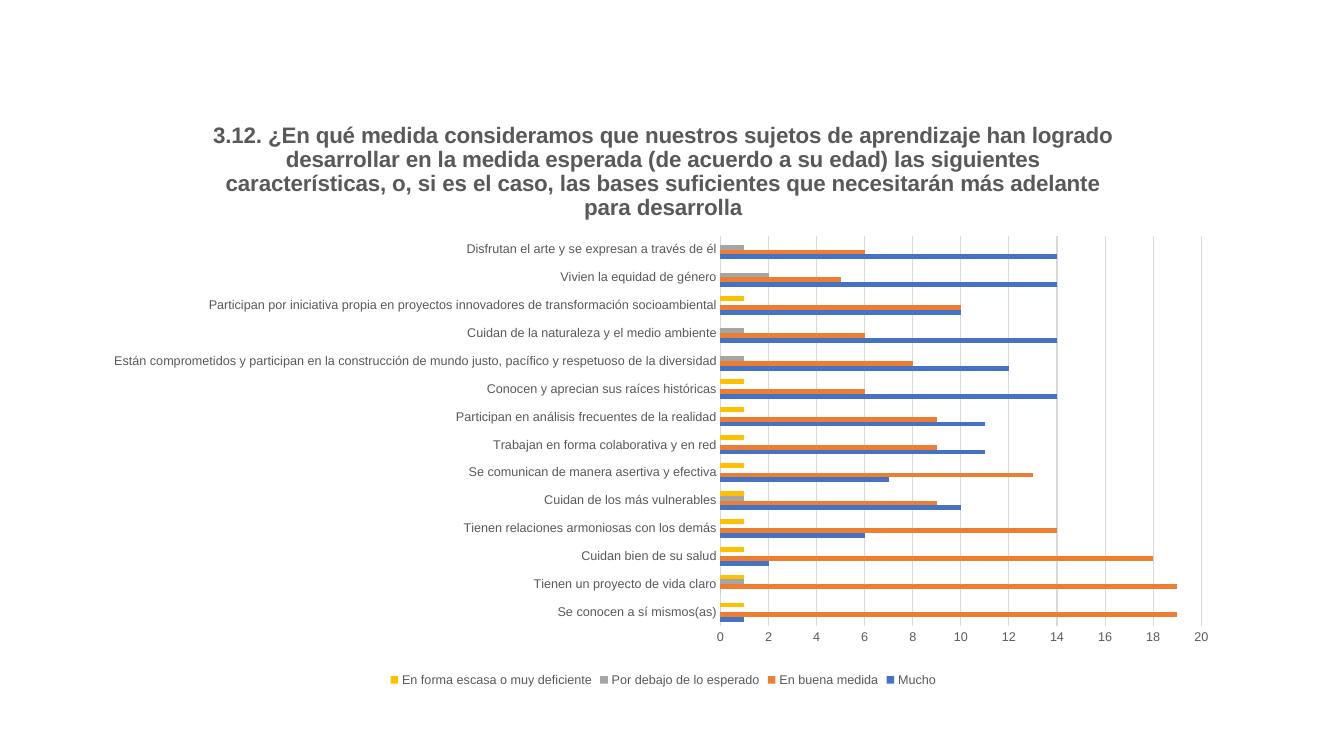
from lxml.etree import SubElement
from pptx import Presentation
from pptx.chart.data import CategoryChartData
from pptx.dml.color import RGBColor
from pptx.enum.chart import XL_CHART_TYPE, XL_LEGEND_POSITION, XL_TICK_MARK
from pptx.oxml.ns import qn
from pptx.util import Cm, Pt

TITLE = (
    "3.12. ¿En qué medida consideramos que nuestros sujetos de aprendizaje han logrado "
    "desarrollar en la medida esperada (de acuerdo a su edad) las siguientes "
    "características, o, si es el caso, las bases suficientes que necesitarán más "
    "adelante para desarrolla"
)
CHARACTERISTICS = [
    "Se conocen a sí mismos(as)",
    "Tienen un proyecto de vida claro",
    "Cuidan bien de su salud",
    "Tienen relaciones armoniosas con los demás",
    "Cuidan de los más vulnerables",
    "Se comunican de manera asertiva y efectiva",
    "Trabajan en forma colaborativa y en red",
    "Participan en análisis frecuentes de la realidad",
    "Conocen y aprecian sus raíces históricas",
    "Están comprometidos y participan en la construcción de mundo justo, pacífico y respetuoso de la diversidad",
    "Cuidan de la naturaleza y el medio ambiente",
    "Participan por iniciativa propia en proyectos innovadores de transformación socioambiental",
    "Vivien la equidad de género",
    "Disfrutan el arte y se expresan a través de él",
]
RATINGS = [
    ("Mucho", "4472C4", [1, 0, 2, 6, 10, 7, 11, 11, 14, 12, 14, 10, 14, 14]),
    ("En buena medida", "ED7D31", [19, 19, 18, 14, 9, 13, 9, 9, 6, 8, 6, 10, 5, 6]),
    ("Por debajo de lo esperado", "A5A5A5", [0, 1, 0, 0, 1, 0, 0, 0, 0, 1, 1, 0, 2, 1]),
    ("En forma escasa o muy deficiente", "FFC000", [1, 1, 1, 1, 1, 1, 1, 1, 1, 0, 0, 1, 0, 0]),
]
PLOT_AREA = {"x": 0.55, "y": 0.23, "w": 0.42, "h": 0.66}


def color(value):
    return RGBColor.from_string(value)


def apply(target, values):
    for name, value in values.items():
        setattr(target, name, value)


class SlideBuilder:
    text_color = "595959"
    line_color = "D9D9D9"
    label_font = {"name": "Arial", "size": Pt(9), "bold": False}
    title_font = {"name": "Arial", "size": Pt(16), "bold": True}

    def __init__(self, slide):
        self.slide = slide

    def style_font(self, font, values):
        apply(font, values)
        font.color.rgb = color(self.text_color)

    def style_line(self, line):
        line.color.rgb = color(self.line_color)
        line.width = Pt(0.75)

    def add_bar_chart(self, left, top, width, height, categories, ratings):
        chart_data = CategoryChartData()
        chart_data.categories = categories
        for name, _, values in ratings:
            chart_data.add_series(name, values)
        chart = self.slide.shapes.add_chart(
            XL_CHART_TYPE.BAR_CLUSTERED, left, top, width, height, chart_data
        ).chart
        self.style_font(chart.font, self.label_font)
        plot = chart.plots[0]
        apply(plot, {"gap_width": 182, "overlap": 0, "vary_by_categories": False})
        for series, (_, fill_color, _) in zip(plot.series, ratings):
            series.format.fill.solid()
            series.format.fill.fore_color.rgb = color(fill_color)
        return chart

    def add_title(self, chart, text):
        chart.has_title = True
        chart.chart_title.include_in_layout = False
        paragraph = chart.chart_title.text_frame.paragraphs[0]
        run = paragraph.add_run()
        run.text = text
        self.style_font(run.font, self.title_font)

    def add_axes(self, chart, maximum, step):
        ticks = {"major_tick_mark": XL_TICK_MARK.NONE, "minor_tick_mark": XL_TICK_MARK.NONE}
        for axis in (chart.category_axis, chart.value_axis):
            apply(axis, ticks)
            self.style_font(axis.tick_labels.font, self.label_font)
        self.style_line(chart.category_axis.format.line)
        scale = {"minimum_scale": 0, "maximum_scale": maximum, "major_unit": step}
        apply(chart.value_axis, scale | {"has_major_gridlines": True})
        chart.value_axis.format.line.fill.background()
        self.style_line(chart.value_axis.major_gridlines.format.line)

    def add_legend(self, chart):
        chart.has_legend = True
        apply(chart.legend, {"position": XL_LEGEND_POSITION.BOTTOM, "include_in_layout": False})
        self.style_font(chart.legend.font, self.label_font)

    def place_plot(self, chart, area):
        plot_area = chart.element.find(".//" + qn("c:plotArea"))
        for existing in plot_area.findall(qn("c:layout")):
            plot_area.remove(existing)
        layout = SubElement(plot_area, qn("c:layout"))
        plot_area.insert(0, layout)
        manual = SubElement(layout, qn("c:manualLayout"))
        settings = {"layoutTarget": "inner", "xMode": "edge", "yMode": "edge"} | area
        for name, value in settings.items():
            SubElement(manual, qn("c:" + name)).set("val", str(value))


def main():
    presentation = Presentation()
    apply(presentation, {"slide_width": Cm(33.87), "slide_height": Cm(19.05)})
    slide = presentation.slides.add_slide(presentation.slide_layouts[6])
    builder = SlideBuilder(slide)
    chart = builder.add_bar_chart(
        Cm(2.29), Cm(2.51), Cm(28.85), Cm(14.91), CHARACTERISTICS, RATINGS
    )
    builder.add_title(chart, TITLE)
    builder.add_axes(chart, 20, 2)
    builder.add_legend(chart)
    builder.place_plot(chart, PLOT_AREA)
    presentation.save("out.pptx")


if __name__ == "__main__":
    main()
